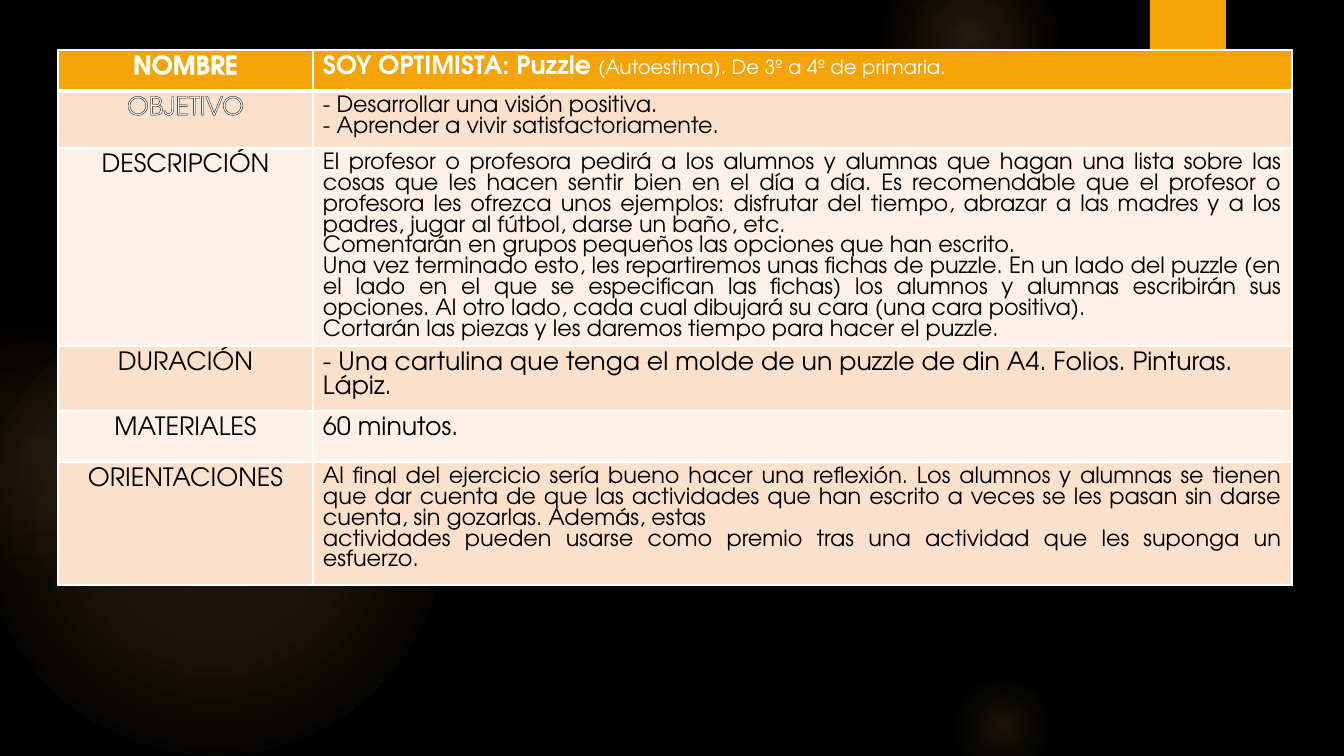
from dataclasses import dataclass
from typing import NamedTuple

from lxml.etree import SubElement
from pptx import Presentation
from pptx.dml.color import RGBColor
from pptx.enum.shapes import MSO_SHAPE as Preset
from pptx.enum.text import PP_ALIGN as Align
from pptx.oxml.ns import qn
from pptx.util import Pt

EMU_PER_PX = 914400 / 100.8


@dataclass(frozen=True)
class Theme:
    font: str = "TeX Gyre Adventor"
    backdrop: str = "000000"
    accent: str = "F5A408"
    glow: str = "FAC96A"
    glow_edge: str = "F59B74"
    light: str = "FFFFFF"
    dark: str = "000000"
    bands: tuple = ("FBE0CC", "FDF0E7")
    large: int = 18
    body: int = 16
    note: int = 14


THEME = Theme()
LINE_PITCH = {THEME.large: 17.2, THEME.body: 14.9}


class Box(NamedTuple):
    left: int
    top: int
    width: int
    height: int


class Row(NamedTuple):
    label: str
    height: int
    size: int
    align: Align
    paragraphs: tuple


class Glow(NamedTuple):
    box: Box
    stops: tuple  # (position %, colour, opacity %)


TITLE = "SOY OPTIMISTA: Puzzle "
TITLE_NOTE = "(Autoestima). De 3º a 4º de primaria."
HEADER_HEIGHT = 41
LABEL_WIDTH = 255
ROWS = (
    Row("OBJETIVO", 57, THEME.body, Align.LEFT, (
        "- Desarrollar una visión positiva.",
        "- Aprender a vivir satisfactoriamente.",
    )),
    Row("DESCRIPCIÓN", 198, THEME.body, Align.JUSTIFY, (
        "El profesor o profesora pedirá a los alumnos y alumnas que hagan una lista "
        "sobre las cosas que les hacen sentir bien en el día a día. Es recomendable "
        "que el profesor o profesora les ofrezca unos ejemplos: disfrutar del tiempo, "
        "abrazar a las madres y a los padres, jugar al fútbol, darse un baño, etc.",
        "Comentarán en grupos pequeños las opciones que han escrito.",
        "Una vez terminado esto, les repartiremos unas fichas de puzzle. En un lado del "
        "puzzle (en el lado en el que se especifican las fichas) los alumnos y alumnas "
        "escribirán sus opciones. Al otro lado, cada cual dibujará su cara (una cara "
        "positiva).",
        "Cortarán las piezas y les daremos tiempo para hacer el puzzle.",
    )),
    Row("DURACIÓN", 65, THEME.large, Align.LEFT, (
        "- Una cartulina que tenga el molde de un puzzle de din A4. Folios. Pinturas. "
        "Lápiz.",
    )),
    Row("MATERIALES", 51, THEME.large, Align.LEFT, ("60 minutos.",)),
    Row("ORIENTACIONES", 123, THEME.body, Align.JUSTIFY, (
        "Al final del ejercicio sería bueno hacer una reflexión. Los alumnos y alumnas "
        "se tienen que dar cuenta de que las actividades que han escrito a veces se les "
        "pasan sin darse cuenta, sin gozarlas. Además, estas",
        "actividades pueden usarse como premio tras una actividad que les suponga un "
        "esfuerzo.",
    )),
)


def glow(box, center, middle, end, edge=THEME.glow):
    """Describe a light that fades out; middle and end are (position, opacity)."""
    return Glow(box, ((0, THEME.glow, center), (middle[0], THEME.glow, middle[1]),
                      (end, edge, 0)))


GLOWS = (
    glow(Box(-17, 294, 462, 462), 11, (36, 10), 75),
    glow(Box(-93, 320, 260, 260), 8, (36, 5), 71, THEME.glow_edge),
    glow(Box(948, 184, 310, 310), 7, (36, 6), 69),
    glow(Box(882, -50, 176, 176), 14, (36, 7), 73),
    glow(Box(948, 672, 109, 109), 10, (31, 5), 66),
)


def px(length):
    return round(length * EMU_PER_PX)


def rgb(code):
    return RGBColor.from_string(code)


def child(parent, tag, **attributes):
    return SubElement(parent, qn(tag), {key: str(value) for key, value in attributes.items()})


def add_line(parent, tag, color, points):
    line = child(parent, tag, w=Pt(points))
    child(child(line, "a:solidFill"), "a:srgbClr", val=color)
    return line


def add_plain_shape(page, preset, box):
    shape = page.shapes.add_shape(preset, *map(px, box))
    shape.shadow.inherit = False
    shape.line.fill.background()
    return shape


def add_glow(page, light):
    shape = add_plain_shape(page, Preset.OVAL, light.box)
    shape.fill.background()
    properties = shape._element.spPr
    empty_fill = properties.find(qn("a:noFill"))
    gradient = child(properties, "a:gradFill", rotWithShape=1)
    stops = child(gradient, "a:gsLst")
    for position, color, opacity in light.stops:
        stop = child(stops, "a:gs", pos=position * 1000)
        child(child(stop, "a:srgbClr", val=color), "a:alpha", val=opacity * 1000)
    center = child(gradient, "a:path", path="circle")
    child(center, "a:fillToRect", l=50000, t=50000, r=50000, b=50000)
    properties.replace(empty_fill, gradient)


def add_backdrop(page):
    page.background.fill.solid()
    page.background.fill.fore_color.rgb = rgb(THEME.backdrop)
    for light in GLOWS:
        add_glow(page, light)
    tab = add_plain_shape(page, Preset.RECTANGLE, Box(1150, 0, 76, 126))
    tab.fill.solid()
    tab.fill.fore_color.rgb = rgb(THEME.accent)


def format_cell(cell, color, bottom_border=1):
    cell.margin_left = cell.margin_right = px(10)
    cell.margin_top = cell.margin_bottom = px(5)
    properties = cell._tc.get_or_add_tcPr()
    for tag, points in (("a:lnL", 1), ("a:lnR", 1), ("a:lnT", 1), ("a:lnB", bottom_border)):
        add_line(properties, tag, THEME.light, points)
    cell.fill.solid()
    cell.fill.fore_color.rgb = rgb(color)


def format_paragraph(para, size, align):
    para.alignment = align
    para.line_spacing = Pt(LINE_PITCH[size])
    para.font.name = THEME.font
    para.font.size = Pt(size)


def add_span(para, text, color, bold=False, outline=None):
    span = para.add_run()
    span.text = text
    span.font.bold = bold
    span.font.color.rgb = rgb(color)
    if outline:
        properties = span._r.get_or_add_rPr()
        properties.insert(0, add_line(properties, "a:ln", outline, 0.75))
    return span


def fill_label(cell, text, color, outline, bold=False):
    para = cell.text_frame.paragraphs[0]
    format_paragraph(para, THEME.large, Align.CENTER)
    add_span(para, text, color, bold, outline)


def fill_header(label_cell, title_cell):
    for cell in (label_cell, title_cell):
        format_cell(cell, THEME.accent, bottom_border=3)
    fill_label(label_cell, "NOMBRE", THEME.light, THEME.light, bold=True)
    para = title_cell.text_frame.paragraphs[0]
    format_paragraph(para, THEME.large, Align.LEFT)
    add_span(para, TITLE, THEME.light, bold=True)
    add_span(para, TITLE_NOTE, THEME.light).font.size = Pt(THEME.note)


def fill_row(label_cell, text_cell, row, band, label_color):
    for cell in (label_cell, text_cell):
        format_cell(cell, band)
    fill_label(label_cell, row.label, label_color, THEME.dark)
    frame = text_cell.text_frame
    for index, text in enumerate(row.paragraphs):
        para = frame.add_paragraph() if index else frame.paragraphs[0]
        format_paragraph(para, row.size, row.align)
        add_span(para, text, THEME.dark)


def add_activity_table(page, box):
    table = page.shapes.add_table(len(ROWS) + 1, 2, *map(px, box)).table
    table.horz_banding = False
    table.columns[0].width = px(LABEL_WIDTH)
    table.columns[1].width = px(box.width - LABEL_WIDTH)
    table.rows[0].height = px(HEADER_HEIGHT)
    fill_header(table.cell(0, 0), table.cell(0, 1))
    for index, row in enumerate(ROWS):
        line = index + 1
        table.rows[line].height = px(row.height)
        label_color = THEME.dark if index else THEME.light
        fill_row(table.cell(line, 0), table.cell(line, 1), row,
                 THEME.bands[index % 2], label_color)


def main():
    deck = Presentation()
    deck.slide_width, deck.slide_height = px(1344), px(756)
    page = deck.slides.add_slide(deck.slide_layouts[6])
    add_backdrop(page)
    table_height = HEADER_HEIGHT + sum(row.height for row in ROWS)
    add_activity_table(page, Box(58, 50, 1234, table_height))
    deck.save("out.pptx")


if __name__ == "__main__":
    main()
